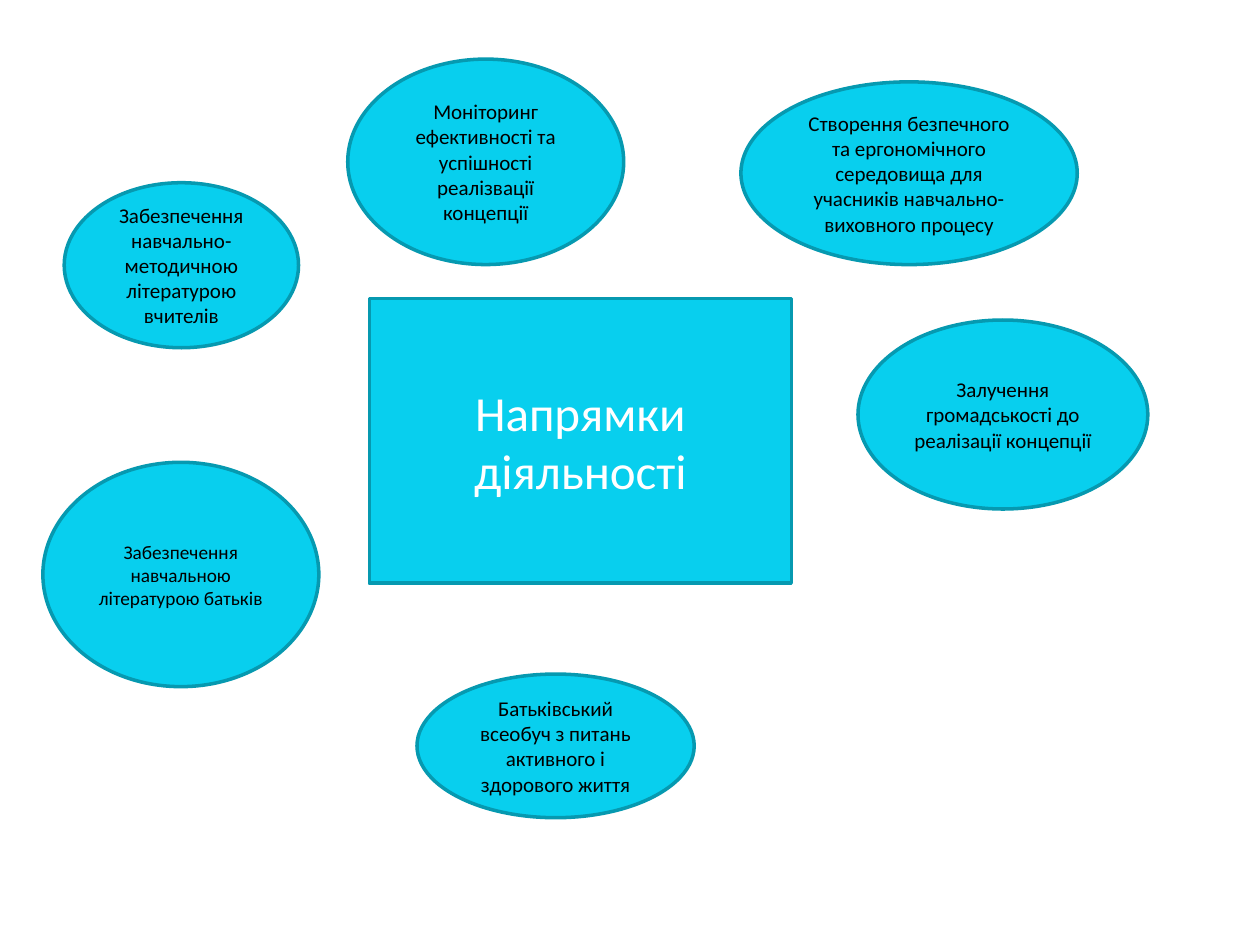
from pptx import Presentation
from pptx.dml.color import RGBColor
from pptx.enum.shapes import MSO_SHAPE as Shape
from pptx.enum.text import MSO_ANCHOR as Anchor, PP_ALIGN as Align
from pptx.util import Pt

# Content: text and (left, top, width, height) in points
CENTRE = ("Напрямки діяльності", (211, 170.6, 241.2, 162.7))
DIRECTIONS = [
    ("Забезпечення навчально-методичною літературою вчителів",
     (36.7, 104.4, 133.9, 94.3)),
    ("Залучення громадськості до реалізації концепції",
     (490.3, 182.9, 165.6, 108)),
    ("Створення безпечного та ергономічного середовища для учасників "
     "навчально-виховного процесу",
     (423.4, 46.8, 192.2, 104.4)),
    ("Моніторинг ефективності та успішності реалізвації концепції",
     (198.7, 33.8, 157.7, 117.4)),
    ("Забезпечення навчальною літературою батьків",
     (24.5, 264.2, 157.7, 128.2)),
    ("Батьківський всеобуч з питань активного і здорового життя",
     (238.3, 385.2, 158.4, 82.1)),
]
SMALLER = {"Забезпечення навчальною літературою батьків"}


class Theme:
    font = "Calibri"
    fill = RGBColor.from_string("08CFEE")
    line = RGBColor.from_string("0699B0")
    light = RGBColor.from_string("FFFFFF")
    dark = RGBColor.from_string("000000")
    line_width = 2
    centre_size = 28
    body_size = 12
    small_size = 11


def write(shape, text, *, size, color):
    frame = shape.text_frame
    frame.word_wrap = True
    frame.vertical_anchor = Anchor.MIDDLE
    para = frame.paragraphs[0]
    para.alignment = Align.CENTER
    span = para.add_run()
    span.text = text
    span.font.name = Theme.font
    span.font.size = Pt(size)
    span.font.color.rgb = color


def add_node(page, kind, frame):
    node = page.shapes.add_shape(kind, *map(Pt, frame))
    node.shadow.inherit = False
    node.fill.solid()
    node.fill.fore_color.rgb = Theme.fill
    node.line.color.rgb = Theme.line
    node.line.width = Pt(Theme.line_width)
    return node


def main():
    deck = Presentation()
    deck.slide_width, deck.slide_height = Pt(720), Pt(540)
    page = deck.slides.add_slide(deck.slide_layouts[6])

    # Central topic
    text, frame = CENTRE
    write(add_node(page, Shape.RECTANGLE, frame), text,
          size=Theme.centre_size, color=Theme.light)

    # Directions around it
    for text, frame in DIRECTIONS:
        size = Theme.small_size if text in SMALLER else Theme.body_size
        write(add_node(page, Shape.OVAL, frame), text,
              size=size, color=Theme.dark)

    deck.save("out.pptx")


if __name__ == "__main__":
    main()
